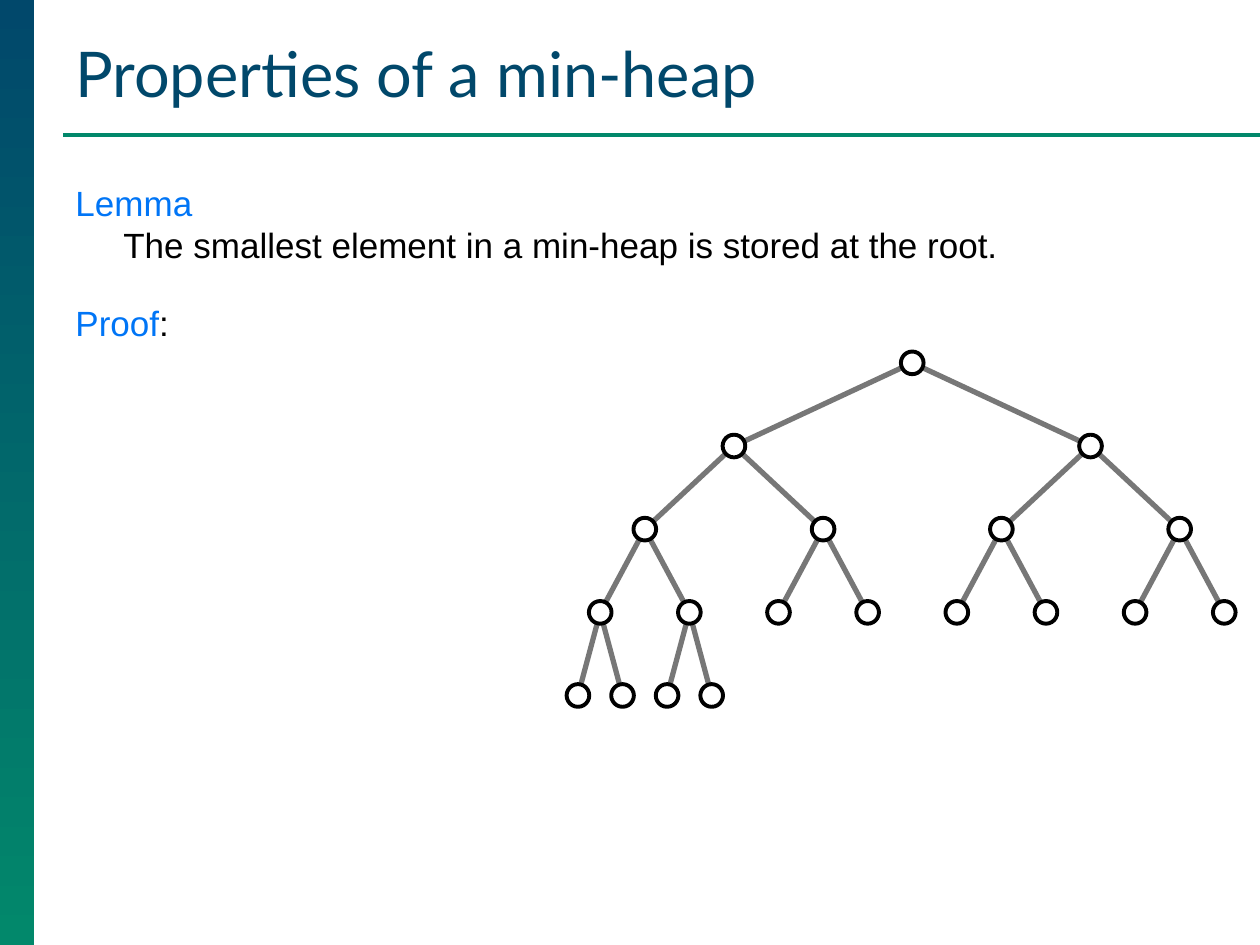
from lxml import etree
from pptx import Presentation
from pptx.dml.color import RGBColor
from pptx.enum.shapes import MSO_CONNECTOR, MSO_SHAPE
from pptx.enum.text import MSO_ANCHOR
from pptx.oxml.ns import qn
from pptx.util import Inches, Pt

LINE = MSO_CONNECTOR.STRAIGHT
RECT, OVAL = MSO_SHAPE.RECTANGLE, MSO_SHAPE.OVAL
BOTTOM = MSO_ANCHOR.BOTTOM

NAVY, GREEN, BLUE = "01486B", "02886B", "0075F6"
BLACK, WHITE, GRAY = "000000", "FFFFFF", "777777"
WIDE, HIGH = 10, 7.5
MARGIN = 0.5

TITLE = "Properties of a min-heap"
BODY = [
    (0, [("Lemma", BLUE), ("\n", None),
         ("The smallest element in a min-heap is stored at the root.", BLACK)]),
    (20.5, [("Proof", BLUE), (":", BLACK)]),
]
LEVELS = [1, 2, 4, 8, 4]
TREE_X, TREE_Y = 4.41, 2.88
SPAN, STEP, NODE = 5.66, 0.66, 0.18


def color(code):
    return RGBColor.from_string(code)


def add_line(shapes, start, end, code, width):
    line = shapes.add_connector(LINE, *map(Inches, (*start, *end)))
    line.line.color.rgb = color(code)
    line.line.width = Pt(width)
    etree.SubElement(line._element.spPr, qn("a:effectLst"))


def add_text(shapes, *area):
    frame = shapes.add_textbox(*map(Inches, area)).text_frame
    frame.word_wrap = True
    return frame


def center(level, index):
    return TREE_X + (index + 0.5) * SPAN / 2 ** level, TREE_Y + level * STEP


def add_bar(shapes):
    bar = shapes.add_shape(RECT, 0, 0, Inches(0.27), Inches(HIGH))
    bar.shadow.inherit = False
    bar.line.fill.background()
    bar.fill.gradient()
    bar.fill.gradient_angle = 270
    for stop, place, code in zip(bar.fill.gradient_stops, (0, 1), (NAVY, GREEN)):
        stop.position = place
        stop.color.rgb = color(code)


def add_title(shapes):
    frame = add_text(shapes, MARGIN, 0.21, 9.28, 0.71)
    frame.vertical_anchor = BOTTOM
    para = frame.paragraphs[0]
    para.text = TITLE
    para.font.name, para.font.size = "Lato", Pt(36)
    para.font.color.rgb = color(NAVY)


def add_body(shapes):
    frame = add_text(shapes, MARGIN, 1.39, 8.92, 5.51)
    for row, (gap, runs) in enumerate(BODY):
        para = frame.add_paragraph() if row else frame.paragraphs[0]
        props = para._p.get_or_add_pPr()
        props.set("marL", str(Inches(0.38)))
        props.set("indent", str(Inches(-0.38)))
        para.line_spacing, para.space_before = Pt(24), Pt(gap)
        para.font.name, para.font.size = "Arial", Pt(20)
        for text, code in runs:
            if text == "\n":
                para.add_line_break()
                continue
            run = para.add_run()
            run.text = text
            run.font.color.rgb = color(code)


def add_tree(shapes):
    group = shapes.add_group_shape().shapes
    nodes = [(level, index) for level, count in enumerate(LEVELS)
             for index in range(count)]
    for level, index in nodes[1:]:
        add_line(group, center(level - 1, index // 2), center(level, index), GRAY, 3)
    for node in nodes:
        x, y = center(*node)
        dot = group.add_shape(OVAL, Inches(x - NODE / 2), Inches(y - NODE / 2),
                              Inches(NODE), Inches(NODE))
        dot.shadow.inherit = False
        dot.fill.solid()
        dot.fill.fore_color.rgb = color(WHITE)
        dot.line.color.rgb = color(BLACK)
        dot.line.width = Pt(2.25)


def main():
    deck = Presentation()
    deck.slide_width, deck.slide_height = Inches(WIDE), Inches(HIGH)
    shapes = deck.slides.add_slide(deck.slide_layouts[6]).shapes
    add_bar(shapes)
    add_line(shapes, (MARGIN, 1.07), (WIDE, 1.07), GREEN, 2.25)
    add_title(shapes)
    add_body(shapes)
    add_tree(shapes)
    deck.save("out.pptx")


if __name__ == "__main__":
    main()
